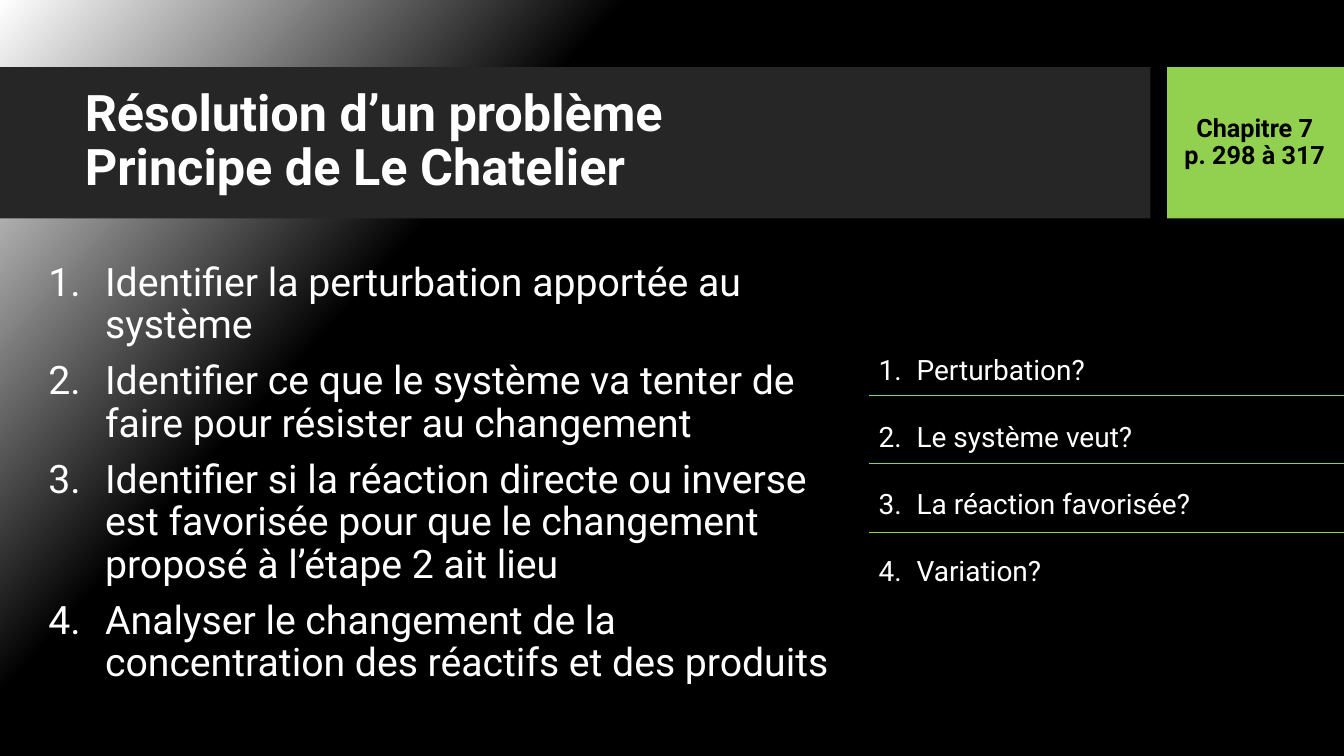
"""Build the slide on solving Le Chatelier problems."""
from copy import deepcopy
from dataclasses import dataclass

from lxml import etree
from pptx import Presentation
from pptx import util as u
from pptx.dml.color import RGBColor
from pptx.enum import shapes, text
from pptx.oxml.ns import qn


@dataclass(frozen=True)
class Theme:
    """Colours, font and type sizes of the slide."""
    white: str = "FFFFFF"
    black: str = "000000"
    band: str = "262626"
    accent: str = "92D050"
    font: str = "Roboto"
    title: int = 36
    steps: int = 28
    questions: int = 20
    chapter: int = 18


def rgb(code):
    """Turn a hex code into a colour."""
    return RGBColor.from_string(code)


class SlideBuilder:
    """Draw styled elements on one slide, with lengths in points."""

    def __init__(self, slide, theme):
        """Keep the slide and its theme."""
        self.slide = slide
        self.theme = theme

    def background(self, angle, fade_end):
        """Fade the background from white to black."""
        fill = self.slide.background.fill
        fill.gradient()
        fill.gradient_angle = 360 - angle
        start, end = fill.gradient_stops
        start.position, end.position = 0, fade_end
        start.color.rgb, end.color.rgb = rgb(self.theme.white), rgb(self.theme.black)
        stops = self.slide.background._cSld.find(".//" + qn("a:gsLst"))
        last = deepcopy(stops[-1])
        last.set("pos", "100000")
        stops.append(last)

    def block(self, left, top, width, height, color):
        """Add a plain filled rectangle."""
        block = self.slide.shapes.add_shape(
            shapes.MSO_SHAPE.RECTANGLE, *map(u.Pt, (left, top, width, height)))
        block.shadow.inherit = False
        block.fill.solid()
        block.fill.fore_color.rgb = rgb(color)
        block.line.fill.background()

    def rule(self, left, right, y):
        """Add a thin horizontal rule."""
        rule = self.slide.shapes.add_connector(
            shapes.MSO_CONNECTOR.STRAIGHT, *map(u.Pt, (left, y, right, y)))
        rule.line.color.rgb = rgb(self.theme.accent)
        rule.line.width = u.Pt(0.75)
        etree.SubElement(rule._element.spPr, qn("a:effectLst"))

    def add_text(self, box, paragraphs, *, size, color=None, bold=False, align=None,
                 anchor=text.MSO_ANCHOR.MIDDLE, spacing=0.9, before=0, indent=0, grow=False):
        """Add a text box, numbering its paragraphs when an indent is given."""
        frame = self.slide.shapes.add_textbox(*map(u.Pt, box)).text_frame
        frame.word_wrap = True
        frame.vertical_anchor = anchor
        if grow:
            frame.auto_size = text.MSO_AUTO_SIZE.SHAPE_TO_FIT_TEXT
        for index, wording in enumerate(paragraphs):
            paragraph = frame.add_paragraph() if index else frame.paragraphs[0]
            paragraph.text = wording
            paragraph.line_spacing = spacing
            paragraph.alignment = align
            if index and before:
                paragraph.space_before = u.Pt(before)
            if indent:
                self.number(paragraph, indent)
            for run in paragraph.runs:
                run.font.name = self.theme.font
                run.font.size = u.Pt(size)
                run.font.bold = bold
                run.font.color.rgb = rgb(color or self.theme.white)

    def number(self, paragraph, indent):
        """Give a paragraph an automatic number and a hanging indent."""
        properties = paragraph._p.get_or_add_pPr()
        properties.set("marL", str(u.Pt(indent)))
        properties.set("indent", str(-u.Pt(indent)))
        etree.SubElement(properties, qn("a:buFont"), typeface="+mj-lt")
        etree.SubElement(properties, qn("a:buAutoNum"), type="arabicPeriod")


def main():
    """Build and save the slide."""
    deck = Presentation()
    deck.slide_width, deck.slide_height = u.Pt(960), u.Pt(540)
    theme = Theme()
    page = SlideBuilder(deck.slides.add_slide(deck.slide_layouts[6]), theme)

    page.background(angle=42, fade_end=0.31)
    page.block(0, 48, 821.8, 108, theme.band)
    page.block(833.6, 48, 126.4, 108, theme.accent)
    page.add_text((53.5, 59, 756.5, 85), ["Résolution d’un problème\vPrincipe de Le Chatelier"],
                  size=theme.title, bold=True)
    page.add_text((832.5, 48, 127.5, 108.5), ["Chapitre 7", "p. 298 à 317"],
                  size=theme.chapter, color=theme.black, bold=True, align=text.PP_ALIGN.CENTER)

    steps = [
        "Identifier la perturbation apportée au système",
        "Identifier ce que le système va tenter de faire pour résister au changement",
        "Identifier si la réaction directe ou inverse est favorisée pour que le changement "
        "proposé à l’étape 2 ait lieu",
        "Analyser le changement de la concentration des réactifs et des produits",
    ]
    page.add_text((27.5, 168.5, 573, 340), steps, size=theme.steps, before=10, indent=40.5)

    questions = ["Perturbation?", "Le système veut?", "La réaction favorisée?", "Variation?"]
    left, right = 620.6, 960
    page.add_text((left, 224, right - left, 193.7), questions, size=theme.questions,
                  anchor=text.MSO_ANCHOR.TOP, spacing=2, indent=27, grow=True)
    for index in range(len(questions) - 1):
        page.rule(left, right, 282.4 + 49 * index)

    deck.save("out.pptx")


if __name__ == "__main__":
    main()
